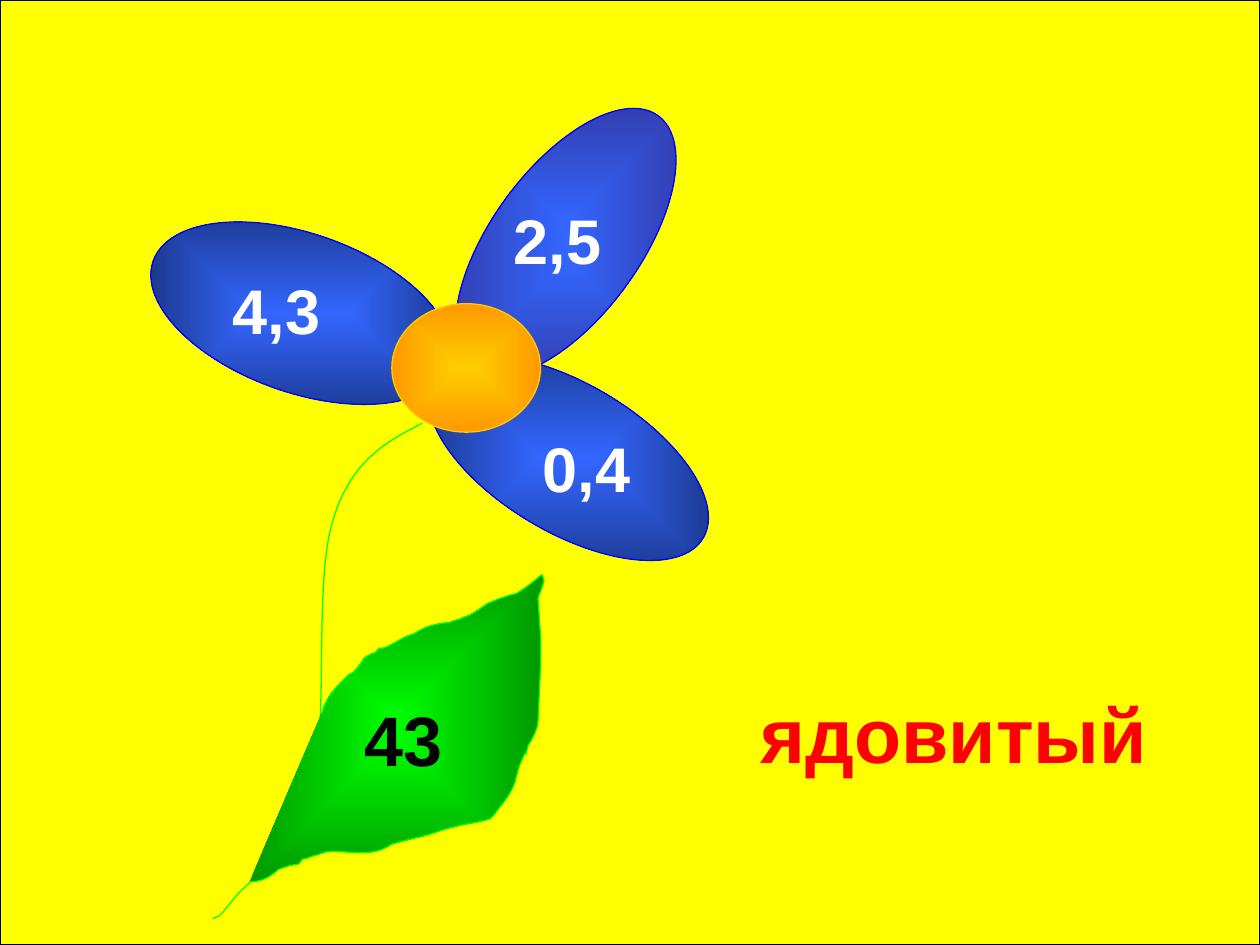
from lxml import etree
from pptx import Presentation, util as u
from pptx.dml.color import RGBColor
from pptx.enum import shapes, text
from pptx.oxml.ns import qn

WIDTH, HEIGHT = 10, 7.5
BLUE, GREEN = "3366FF", "00FF00"
EDGE_SHADE = "46275"

PETALS = [
    ((3.9, 0.68, 1.18, 2.49), 36.1, "333399", None),
    ((3.92, 2.39, 1.18, 2.49), 120.7, BLUE, EDGE_SHADE),
    ((1.76, 1.24, 1.26, 2.49), 289.4, BLUE, EDGE_SHADE),
]
PETAL_LABELS = [("2,5", 3.98, 1.55), ("4,3", 1.75, 2.11), ("0,4", 4.21, 3.36)]
STEM = [
    (3.35, 3.36), (3.06, 3.51), (2.78, 3.66), (2.64, 4.14),
    (2.49, 4.63), (2.61, 5.77), (2.48, 6.27),
    (2.35, 6.77), (1.98, 6.97), (1.85, 7.14),
    (1.72, 7.31), (1.72, 7.28), (1.69, 7.29),
]
LEAF = [
    (2.56, 5.65), (2.59, 5.52), (2.67, 5.46), (2.76, 5.36),
    (2.78, 5.35), (2.81, 5.34), (2.82, 5.32),
    (2.91, 5.22), (2.86, 5.22), (2.98, 5.18),
    (3.05, 5.1), (2.97, 5.18), (3.08, 5.13),
    (3.18, 5.08), (3.19, 5.06), (3.29, 5.03),
    (3.37, 4.97), (3.47, 4.95), (3.57, 4.94),
    (3.61, 4.92), (3.65, 4.92), (3.68, 4.9),
    (3.75, 4.88), (3.81, 4.83), (3.87, 4.79),
    (3.94, 4.76), (4.02, 4.73), (4.1, 4.71),
    (4.18, 4.66), (4.23, 4.62), (4.3, 4.56),
    (4.33, 4.63), (4.32, 4.59), (4.29, 4.7),
    (4.28, 4.71), (4.27, 4.75), (4.27, 4.75),
    (4.3, 5.2), (4.3, 5.06), (4.27, 5.73),
    (4.27, 5.8), (4.19, 5.92), (4.19, 5.92),
    (4.15, 6.09), (4.21, 5.86), (4.13, 6.06),
    (4.1, 6.13), (4.1, 6.2), (4.06, 6.27),
    (4.03, 6.33), (3.98, 6.39), (3.94, 6.44),
    (3.92, 6.46), (3.92, 6.48), (3.9, 6.49),
    (3.87, 6.52), (3.67, 6.54), (3.62, 6.56),
    (3.51, 6.58), (3.41, 6.63), (3.3, 6.65),
    (3.26, 6.66), (3.22, 6.67), (3.18, 6.68),
    (3.15, 6.69), (3.11, 6.7), (3.11, 6.7),
    (2.95, 6.81), (2.81, 6.75), (2.59, 6.76),
    (2.48, 6.8), (2.52, 6.78), (2.44, 6.81),
    (2.43, 6.81), (2.4, 6.82), (2.4, 6.82),
    (2.35, 6.88), (2.39, 6.85), (2.3, 6.87),
    (2.27, 6.88), (2.21, 6.9), (2.21, 6.9),
    (2.15, 6.96), (2.07, 7), (1.98, 7),
]


def color(hex_code):
    """Turn a hex string into a colour."""
    return RGBColor.from_string(hex_code)


def paint(shape, fill, line, path="shape", edge_shade=None):
    """Set line and fill: None, one colour, or a centre and edge pair."""
    shape.shadow.inherit = False
    shape.line.color.rgb = color(line)
    shape.line.width = u.Pt(0.75)
    if fill is None:
        shape.fill.background()
    elif isinstance(fill, str):
        shape.fill.solid()
        shape.fill.fore_color.rgb = color(fill)
    else:
        shape.fill.gradient()
        for stop, hex_code in zip(shape.fill.gradient_stops, fill):
            stop.color.rgb = color(hex_code)
        gradient = shape._element.spPr.find(qn("a:gradFill"))
        gradient.remove(gradient.find(qn("a:lin")))
        spread = etree.SubElement(gradient, qn("a:path"), path=path)
        etree.SubElement(spread, qn("a:fillToRect"),
                         dict.fromkeys("ltrb", "50000"))
        if edge_shade:
            edge = gradient.findall(".//" + qn("a:srgbClr"))[-1]
            etree.SubElement(edge, qn("a:gamma"))
            etree.SubElement(edge, qn("a:shade"), val=edge_shade)
            etree.SubElement(edge, qn("a:invGamma"))


def add_preset(slide, preset, box, fill, line, rotation=0, edge_shade=None):
    """Add a painted preset shape."""
    shape = slide.shapes.add_shape(preset, *map(u.Inches, box))
    shape.rotation = rotation
    paint(shape, fill, line, edge_shade=edge_shade)


def add_curve(slide, controls, fill, line):
    """Add an open outline of chained cubic curves."""
    points = [tuple(map(u.Inches, point)) for point in controls]
    builder = slide.shapes.build_freeform(*points[0])
    builder.add_line_segments(points[3::3], close=False)
    outline = builder.convert_to_shape()
    segments = outline._element.findall(".//" + qn("a:lnTo"))
    for index, segment in enumerate(segments):
        segment.tag = qn("a:cubicBezTo")
        handles = points[3 * index + 1:3 * index + 3]
        for place, (x, y) in enumerate(handles):
            handle = etree.Element(qn("a:pt"), x=str(x - outline.left),
                                   y=str(y - outline.top))
            segment.insert(place, handle)
    paint(outline, fill, line, path="rect")


def add_text(slide, words, box, size, hex_code, wrap=False):
    """Add a bold text box."""
    frame = slide.shapes.add_textbox(*map(u.Inches, box)).text_frame
    frame.word_wrap = wrap
    frame.auto_size = text.MSO_AUTO_SIZE.SHAPE_TO_FIT_TEXT
    run = frame.paragraphs[0].add_run()
    run.text = words
    run.font.name = "Arial"
    run.font.size = u.Pt(size)
    run.font.bold = True
    run.font.color.rgb = color(hex_code)


def main():
    """Build the flower slide."""
    deck = Presentation()
    deck.slide_width, deck.slide_height = u.Inches(WIDTH), u.Inches(HEIGHT)
    slide = deck.slides.add_slide(deck.slide_layouts[6])
    oval = shapes.MSO_SHAPE.OVAL

    add_preset(slide, shapes.MSO_SHAPE.RECTANGLE, (0, 0, WIDTH, HEIGHT),
               "FFFF00", "000000")
    for box, rotation, edge, shade in PETALS:
        add_preset(slide, oval, box, (BLUE, edge), "0000FF", rotation, shade)
    add_preset(slide, oval, (3.11, 2.41, 1.18, 1.02),
               ("FFCC00", "FF9900"), "FFCC00")
    add_curve(slide, STEM, None, GREEN)
    for words, left, top in PETAL_LABELS:
        add_text(slide, words, (left, top, 0.9, 0.7), 36, "FFFFFF")
    add_curve(slide, LEAF, (GREEN, "009900"), GREEN)
    add_text(slide, " 43", (2.64, 5.48, 0.97, 0.77), 40, "000000")
    add_text(slide, "ядовитый", (5.94, 5.4, 3.7, 0.83), 44, "FF0000", wrap=True)
    deck.save("out.pptx")


if __name__ == "__main__":
    main()
